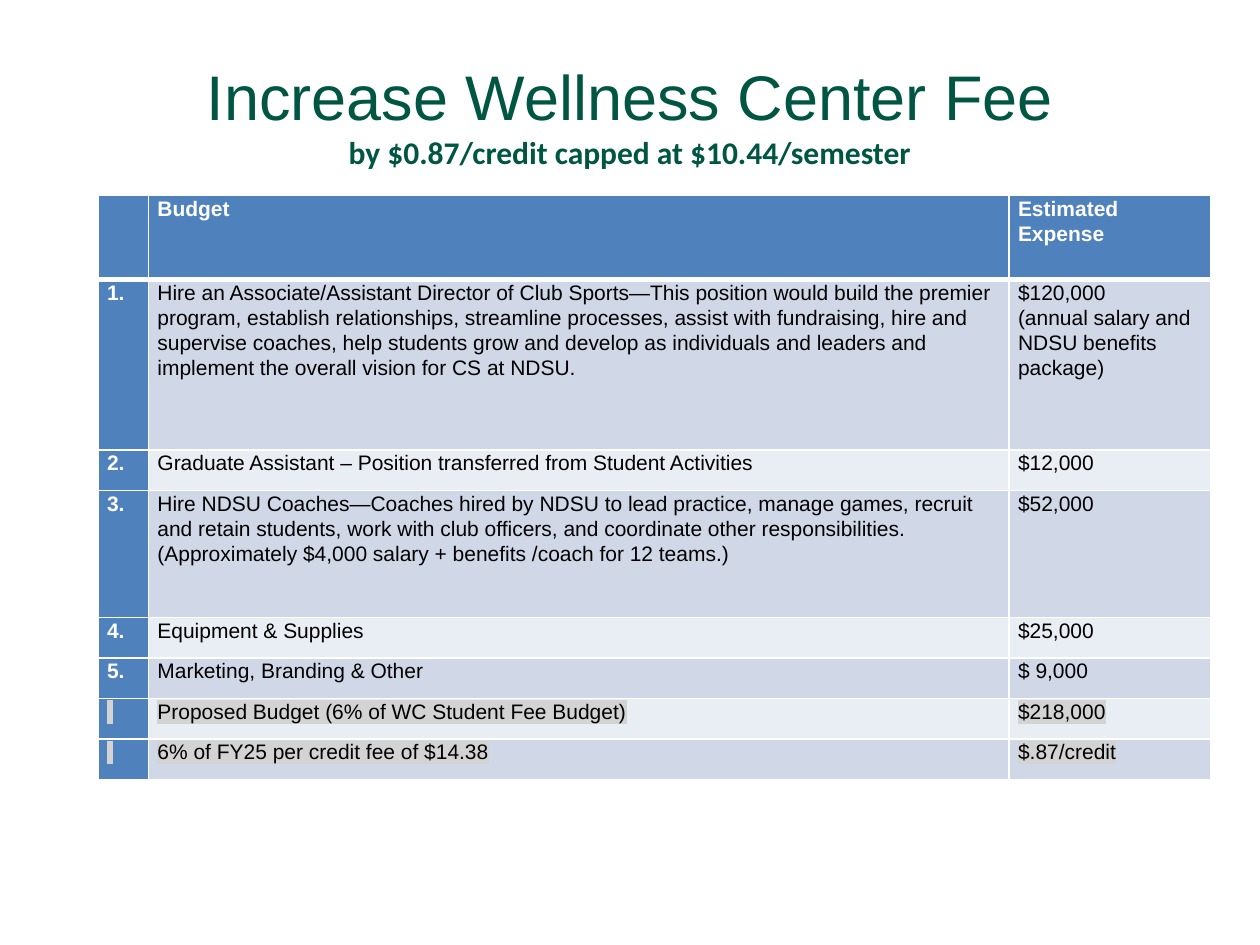
from lxml import etree
from pptx import Presentation
from pptx import util as u
from pptx.dml.color import RGBColor
from pptx.enum import text
from pptx.oxml import ns

GREEN, BLUE, WHITE, BLACK = "005643", "4F81BD", "FFFFFF", "000000"
BANDS = ("D0D8E8", "E9EDF4")
HIGHLIGHT = "D3D3D3"

TITLE_LINES = [
    ("Increase Wellness Center Fee", {"size": u.Pt(36), "name": "Arial", "bold": False}),
    ("by $0.87/credit capped at $10.44/semester",
     {"size": u.Pt(18), "name": "Calibri", "bold": True}),
]
COLUMNS = (0.4, 6.83, 1.6)
TABLE_HEIGHT = 4.64
TALL_ROWS = {0: 0.67, 1: 1.35, 3: 1.01}
ROWS = [
    ("", "Budget", "Estimated Expense"),
    ("1.", "Hire an Associate/Assistant Director of Club Sports—This position would build "
     "the premier program, establish relationships, streamline processes, assist with "
     "fundraising, hire and supervise coaches, help students grow and develop as individuals "
     "and leaders and implement the overall vision for CS at NDSU.",
     "$120,000\n(annual salary and NDSU benefits package)"),
    ("2.", "Graduate Assistant – Position transferred from Student Activities", "$12,000"),
    ("3.", "Hire NDSU Coaches—Coaches hired by NDSU to lead practice, manage games, recruit "
     "and retain students, work with club officers, and coordinate other responsibilities. "
     "(Approximately $4,000 salary + benefits /coach for 12 teams.)", "$52,000"),
    ("4.", "Equipment & Supplies", "$25,000"),
    ("5.", "Marketing, Branding & Other", "$ 9,000"),
    (" ", "Proposed Budget (6% of WC Student Fee Budget)", "$218,000"),
    (" ", "6% of FY25 per credit fee of $14.38", "$.87/credit"),
]
SUMMARY_START = 6


def color(value):
    return RGBColor.from_string(value)


def add_span(para, words, hue, style):
    span = para.add_run()
    span.text = words
    for name, value in style.items():
        setattr(span.font, name, value)
    span.font.color.rgb = color(hue)
    return span


def add_highlight(span):
    """Place the highlight between the text fill and the typeface."""
    mark = etree.Element(ns.qn("a:highlight"))
    etree.SubElement(mark, ns.qn("a:srgbClr"), val=HIGHLIGHT)
    span.font._element.find(ns.qn("a:latin")).addprevious(mark)


def add_paragraphs(frame, count):
    return [frame.paragraphs[0]] + [frame.add_paragraph() for _ in range(count - 1)]


def set_borders(cell, bottom):
    properties = cell._tc.get_or_add_tcPr()
    for side, width in (("L", 1), ("R", 1), ("T", 1), ("B", bottom)):
        line = etree.SubElement(properties, ns.qn(f"a:ln{side}"), w=str(u.Pt(width)))
        fill = etree.SubElement(line, ns.qn("a:solidFill"))
        etree.SubElement(fill, ns.qn("a:srgbClr"), val=WHITE)


def fill_title(title):
    place = {"left": 0.5, "top": 0.3, "width": 9, "height": 1.25}
    for name, value in place.items():
        setattr(title, name, u.Inches(value))
    frame = title.text_frame
    frame.word_wrap = True
    frame.auto_size = text.MSO_AUTO_SIZE.NONE
    frame.vertical_anchor = text.MSO_ANCHOR.MIDDLE
    frame.margin_bottom = u.Inches(0.09)
    for para, (words, style) in zip(add_paragraphs(frame, len(TITLE_LINES)), TITLE_LINES):
        para.alignment = text.PP_ALIGN.CENTER
        add_span(para, words, GREEN, style)


def fill_cell(cell, words, row, column):
    heading = row == 0 or column == 0
    set_borders(cell, bottom=3 if row == 0 else 1)
    cell.fill.solid()
    cell.fill.fore_color.rgb = color(BLUE if heading else BANDS[(row - 1) % 2])
    margins = {"margin_left": 0.07, "margin_right": 0.07, "margin_top": 0, "margin_bottom": 0}
    for name, value in margins.items():
        setattr(cell, name, u.Inches(value))
    if not words:
        return
    style = {"size": u.Pt(12), "name": "Arial", "bold": heading}
    lines = words.split("\n")
    for para, line in zip(add_paragraphs(cell.text_frame, len(lines)), lines):
        para.line_spacing = 1.07
        span = add_span(para, line, WHITE if heading else BLACK, style)
        if row >= SUMMARY_START:
            add_highlight(span)


def add_budget_table(page):
    frame = page.shapes.add_table(len(ROWS), len(COLUMNS), u.Inches(0.78), u.Inches(1.55),
                                  u.Inches(sum(COLUMNS)), u.Inches(TABLE_HEIGHT))
    table = frame.table
    table.first_col = True
    table.horz_banding = False
    for column, width in zip(table.columns, COLUMNS):
        column.width = u.Inches(width)
    # Rows without a height of their own share the rest equally
    short = (TABLE_HEIGHT - sum(TALL_ROWS.values())) / (len(ROWS) - len(TALL_ROWS))
    for row, entries in enumerate(ROWS):
        table.rows[row].height = u.Inches(TALL_ROWS.get(row, short))
        for column, words in enumerate(entries):
            fill_cell(table.cell(row, column), words, row, column)


def main():
    deck = Presentation()
    deck.slide_width, deck.slide_height = u.Inches(10), u.Inches(7.5)
    page = deck.slides.add_slide(deck.slide_layouts[5])
    page.background.fill.solid()
    page.background.fill.fore_color.rgb = color(WHITE)
    fill_title(page.shapes.title)
    add_budget_table(page)
    deck.save("out.pptx")


if __name__ == "__main__":
    main()
